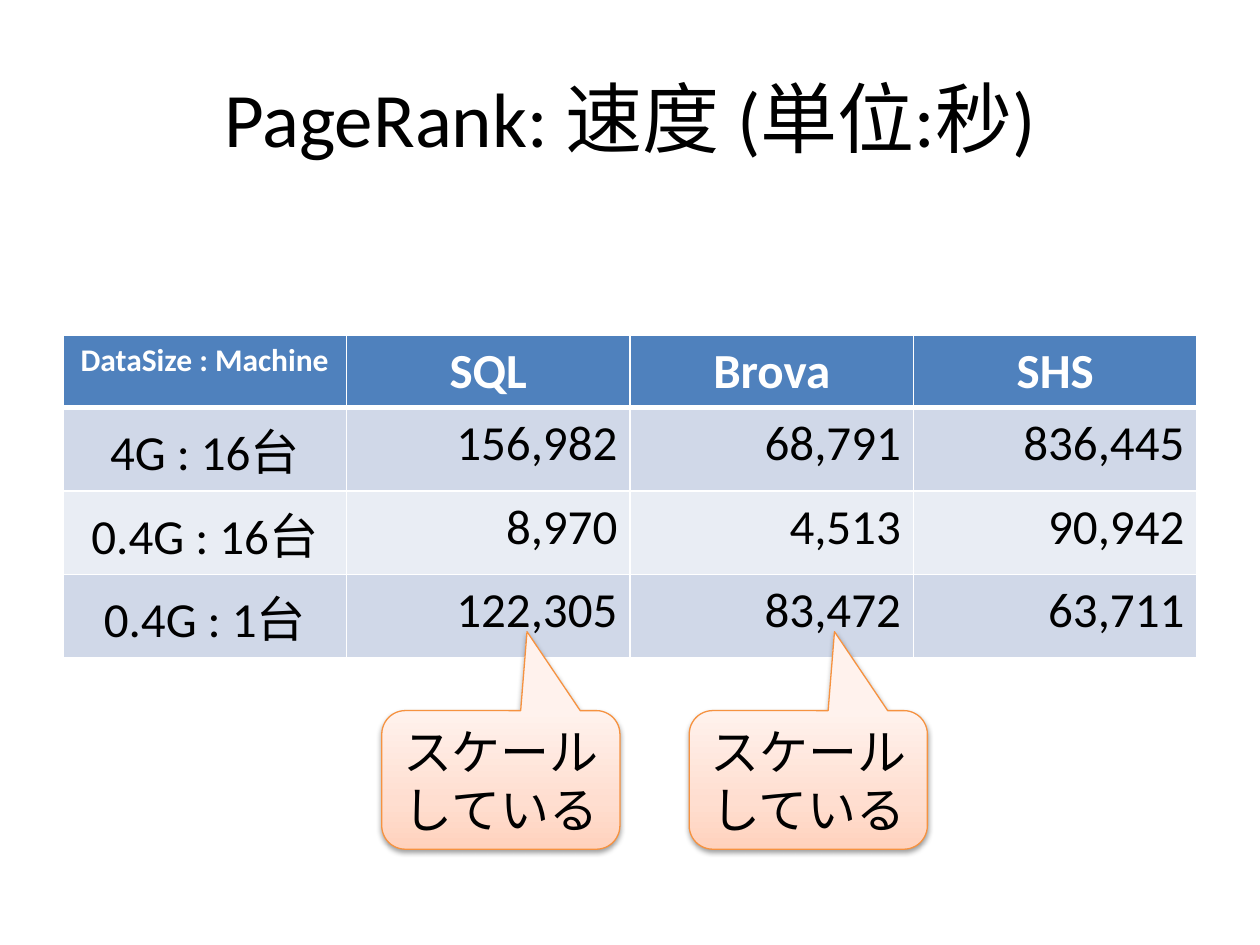
"""Build a PageRank timing slide with a table and two callouts."""
import copy
import dataclasses

import lxml.etree
import pptx
import pptx.dml.color
import pptx.enum.shapes
import pptx.enum.text
import pptx.oxml
import pptx.oxml.ns
import pptx.util

Inches = pptx.util.Inches
Pt = pptx.util.Pt
Align = pptx.enum.text.PP_ALIGN
Middle = pptx.enum.text.MSO_ANCHOR.MIDDLE


@dataclasses.dataclass
class Theme:
    font: str = "Calibri"
    ink: str = "000000"
    white: str = "FFFFFF"
    head: str = "4F81BD"
    bands: tuple = ("D0D8E8", "E9EDF4")
    edge: str = "F69240"
    fade: tuple = ((0, "FFD2BD"), (0.35, "FFDED0"), (1, "FFF2ED"))
    title: int = 44
    text: int = 28
    small: int = 18


theme = Theme()


def rgb(code):
    return pptx.dml.color.RGBColor.from_string(code)


def write(para, text, size, color=theme.ink, bold=False, align=Align.CENTER):
    para.alignment = align
    run = para.add_run()
    run.text = text
    run.font.name = theme.font
    run.font.size = Pt(size)
    run.font.bold = bold
    run.font.color.rgb = rgb(color)


deck = pptx.Presentation()
deck.slide_width, deck.slide_height = Inches(10), Inches(7.5)
slide = deck.slides.add_slide(deck.slide_layouts[5])

title = slide.shapes.title
title.left, title.top = Inches(0.5), Inches(0.3)
title.width, title.height = Inches(9), Inches(1.25)
title.text_frame.vertical_anchor = Middle
write(title.text_frame.paragraphs[0], "PageRank: 速度 (単位:秒)", theme.title)

data = (
    ("DataSize : Machine", "SQL", "Brova", "SHS"),
    ("4G : 16台", "156,982", "68,791", "836,445"),
    ("0.4G : 16台", "8,970", "4,513", "90,942"),
    ("0.4G : 1台", "122,305", "83,472", "63,711"),
)
frame = slide.shapes.add_table(4, 4, Inches(0.5), Inches(2.66), Inches(9), Inches(2.27))
table = frame.table
for row, line in enumerate(data):
    table.rows[row].height = Inches(0.41)
    for col, text in enumerate(line):
        cell = table.cell(row, col)
        head = row == 0
        write(
            cell.text_frame.paragraphs[0],
            text,
            theme.small if head and col == 0 else theme.text,
            theme.white if head else theme.ink,
            head,
            Align.CENTER if head or col == 0 else Align.RIGHT,
        )
        props = cell._tc.get_or_add_tcPr()
        for side in ("lnL", "lnR", "lnT", "lnB"):
            thick = (row, side) in ((0, "lnB"), (1, "lnT"))
            props.append(pptx.oxml.parse_xml(
                f'<a:{side} {pptx.oxml.ns.nsdecls("a")} w="{Pt(3 if thick else 1)}">'
                f'<a:solidFill><a:srgbClr val="{theme.white}"/></a:solidFill></a:{side}>'
            ))
        cell.fill.solid()
        cell.fill.fore_color.rgb = rgb(theme.head if head else theme.bands[(row - 1) % 2])
frame.height = Inches(2.27)

for left in (3.03, 5.47):
    note = slide.shapes.add_shape(
        pptx.enum.shapes.MSO_SHAPE.ROUNDED_RECTANGULAR_CALLOUT,
        Inches(left), Inches(5.64), Inches(1.89), Inches(1.1),
    )
    for spot, value in enumerate((0.11, -1.07, 0.17)):
        note.adjustments[spot] = value
    note.fill.gradient()
    note.fill.gradient_angle = 90
    stops = note.fill._fill._gradFill.gsLst
    stops.append(copy.deepcopy(stops[0]))
    for stop, (place, color) in zip(note.fill.gradient_stops, theme.fade):
        stop.position = place
        stop.color.rgb = rgb(color)
    note.line.color.rgb = rgb(theme.edge)
    note.line.width = Pt(0.75)
    note.shadow.inherit = False
    glow = note._element.spPr.find(pptx.oxml.ns.qn("a:effectLst"))
    shade = lxml.etree.SubElement(
        glow, pptx.oxml.ns.qn("a:outerShdw"),
        blurRad=str(Pt(3.1)), dist=str(Pt(1.6)), dir="5400000", rotWithShape="0",
    )
    black = lxml.etree.SubElement(shade, pptx.oxml.ns.qn("a:srgbClr"), val=theme.ink)
    lxml.etree.SubElement(black, pptx.oxml.ns.qn("a:alpha"), val="38000")
    note.text_frame.word_wrap = True
    note.text_frame.vertical_anchor = Middle
    para = note.text_frame.paragraphs[0]
    write(para, "スケール", theme.text)
    para.add_line_break()
    write(para, "している", theme.text)

deck.save("out.pptx")
